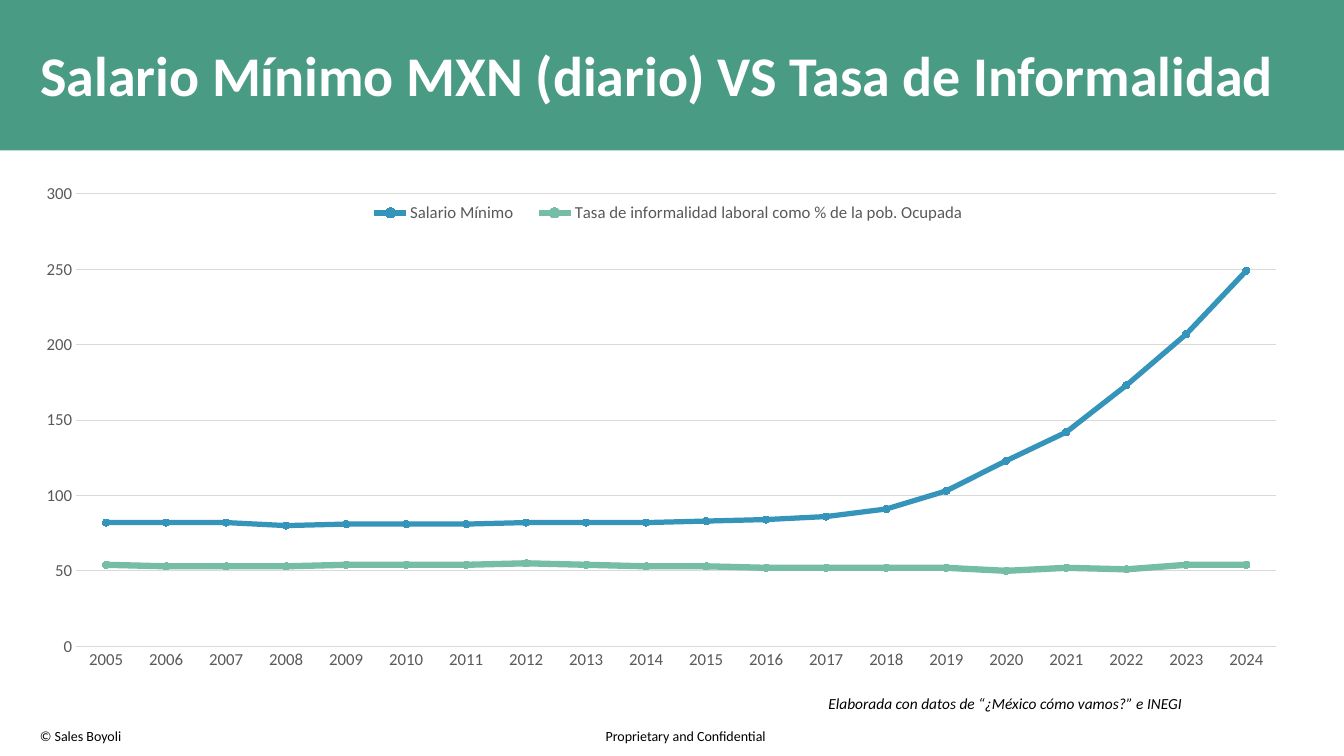
from dataclasses import dataclass

from pptx import Presentation
from pptx.chart.data import CategoryChartData
from pptx.dml.color import RGBColor
from pptx.enum.chart import XL_CHART_TYPE, XL_LEGEND_POSITION, XL_MARKER_STYLE, XL_TICK_MARK
from pptx.enum.shapes import MSO_SHAPE
from pptx.enum.text import MSO_ANCHOR, MSO_AUTO_SIZE, PP_ALIGN
from pptx.oxml import parse_xml
from pptx.oxml.ns import nsdecls
from pptx.util import Pt


@dataclass(frozen=True)
class Theme:
    face: str = "Calibri"
    green: str = "4A9B83"
    white: str = "FFFFFF"
    black: str = "000000"
    gray: str = "595959"
    rule: str = "D9D9D9"
    blue: str = "3494BA"
    mint: str = "75BDA7"
    teal: str = "58B6C0"
    title: int = 40
    label: int = 12
    source: int = 11
    small: int = 10


THEME = Theme()
WIDE, HIGH = 960, 540
YEARS = range(2005, 2025)
WAGE = (82, 82, 82, 80, 81, 81, 81, 82, 82, 82,
        83, 84, 86, 91, 103, 123, 142, 173, 207, 249)
RATE = (54, 53, 53, 53, 54, 54, 54, 55, 54, 53,
        53, 52, 52, 52, 52, 50, 52, 51, 54, 54)
# name, values, line colour, line width, marker colour
SERIES = (
    ("Salario Mínimo", WAGE, THEME.blue, 3.75, THEME.blue),
    ("Tasa de informalidad laboral como % de la pob. Ocupada",
     RATE, THEME.mint, 4.5, THEME.teal),
)
# text, box, size, italic, wrap
NOTES = (
    ("Proprietary and Confidential", (425.5, 516, 130, 19.4), THEME.small, False, False),
    ("© Sales Boyoli", (21.4, 516, 242.6, 19.4), THEME.small, False, True),
    ("Elaborada con datos de “¿México cómo vamos?” e INEGI",
     (584.6, 492.5, 340, 20.6), THEME.source, True, True),
)


def apply(item, **values):
    for name, value in values.items():
        setattr(item, name, value)


def style(font, size, color, **values):
    apply(font, name=THEME.face, size=Pt(size), **values)
    font.color.rgb = RGBColor.from_string(color)


def paint(fill, color):
    fill.solid()
    fill.fore_color.rgb = RGBColor.from_string(color)


def stroke(line, color, width):
    paint(line.fill, color)
    line.width = Pt(width)


def header(slide, box):
    """Place the title over a green band that fills the box."""
    left, top, width, height = box
    band = slide.shapes.add_shape(MSO_SHAPE.RECTANGLE, *map(Pt, box))
    band.shadow.inherit = False
    paint(band.fill, THEME.green)
    band.line.fill.background()
    title = slide.shapes.title
    title.element.addprevious(band.element)
    apply(title, left=Pt(left + 21.6), top=Pt(top + 10.4),
          width=Pt(width - 44), height=Pt(height - 16.5))
    frame = title.text_frame
    apply(frame, text="Salario Mínimo MXN (diario) VS Tasa de Informalidad",
          word_wrap=True, auto_size=MSO_AUTO_SIZE.NONE,
          vertical_anchor=MSO_ANCHOR.MIDDLE)
    line = frame.paragraphs[0]
    apply(line, alignment=PP_ALIGN.LEFT, line_spacing=0.9)
    style(line.font, THEME.title, THEME.white, bold=True)


def note(slide, text, box, size, italic, wrap):
    frame = slide.shapes.add_textbox(*map(Pt, box)).text_frame
    apply(frame, text=text, word_wrap=wrap, auto_size=MSO_AUTO_SIZE.SHAPE_TO_FIT_TEXT)
    style(frame.paragraphs[0].font, size, THEME.black, italic=italic)


def layout(box, inner=False):
    """Return a manual chart layout; the box holds shares of the chart."""
    target = '<c:layoutTarget val="inner"/>' if inner else ""
    modes = "".join(f'<c:{key}Mode val="edge"/>' for key in "xy")
    sizes = "".join(f'<c:{key} val="{part}"/>' for key, part in zip("xywh", box))
    return parse_xml(f'<c:layout {nsdecls("c")}><c:manualLayout>'
                     f'{target}{modes}{sizes}</c:manualLayout></c:layout>')


def arrange(chart):
    """Fix the plot area and set the legend inside its top edge."""
    for old in chart.element.xpath("//c:plotArea/c:layout | //c:legend/c:layout"):
        old.getparent().remove(old)
    plot = chart.element.xpath("//c:plotArea")[0]
    plot.insert(0, layout((0.043, 0.04, 0.936, 0.833), inner=True))
    place = chart.element.xpath("//c:legendPos")[0]
    place.addnext(layout((0.26, 0.05, 0.49, 0.05)))


def graph(slide, box):
    data = CategoryChartData()
    data.categories = [str(year) for year in YEARS]
    for name, values, *_ in SERIES:
        data.add_series(name, values)
    chart = slide.shapes.add_chart(
        XL_CHART_TYPE.LINE_MARKERS, *map(Pt, box), data).chart
    apply(chart, has_title=False, has_legend=True)
    style(chart.font, THEME.small, THEME.black)
    chart.plots[0].vary_by_categories = False
    apply(chart.legend, position=XL_LEGEND_POSITION.BOTTOM, include_in_layout=False)
    style(chart.legend.font, THEME.label, THEME.gray)

    years, scale = chart.category_axis, chart.value_axis
    for axis in (years, scale):
        apply(axis, major_tick_mark=XL_TICK_MARK.NONE, minor_tick_mark=XL_TICK_MARK.NONE)
        style(axis.tick_labels.font, THEME.label, THEME.gray)
    stroke(years.format.line, THEME.rule, 0.75)
    scale.format.line.fill.background()
    apply(scale, minimum_scale=0, maximum_scale=300, major_unit=50,
          has_major_gridlines=True)
    stroke(scale.major_gridlines.format.line, THEME.rule, 0.75)

    for series, (_, _, color, width, dot) in zip(chart.plots[0].series, SERIES):
        series.smooth = False
        stroke(series.format.line, color, width)
        apply(series.marker, style=XL_MARKER_STYLE.CIRCLE, size=5)
        paint(series.marker.format.fill, dot)
        stroke(series.marker.format.line, dot, 0.75)
    arrange(chart)


def main():
    deck = Presentation()
    apply(deck, slide_width=Pt(WIDE), slide_height=Pt(HIGH))
    slide = deck.slides.add_slide(deck.slide_layouts[5])
    header(slide, (0, 0, WIDE, 107.5))
    for item in NOTES:
        note(slide, *item)
    graph(slide, (15, 123, 916, 388))
    deck.save("out.pptx")


if __name__ == "__main__":
    main()
